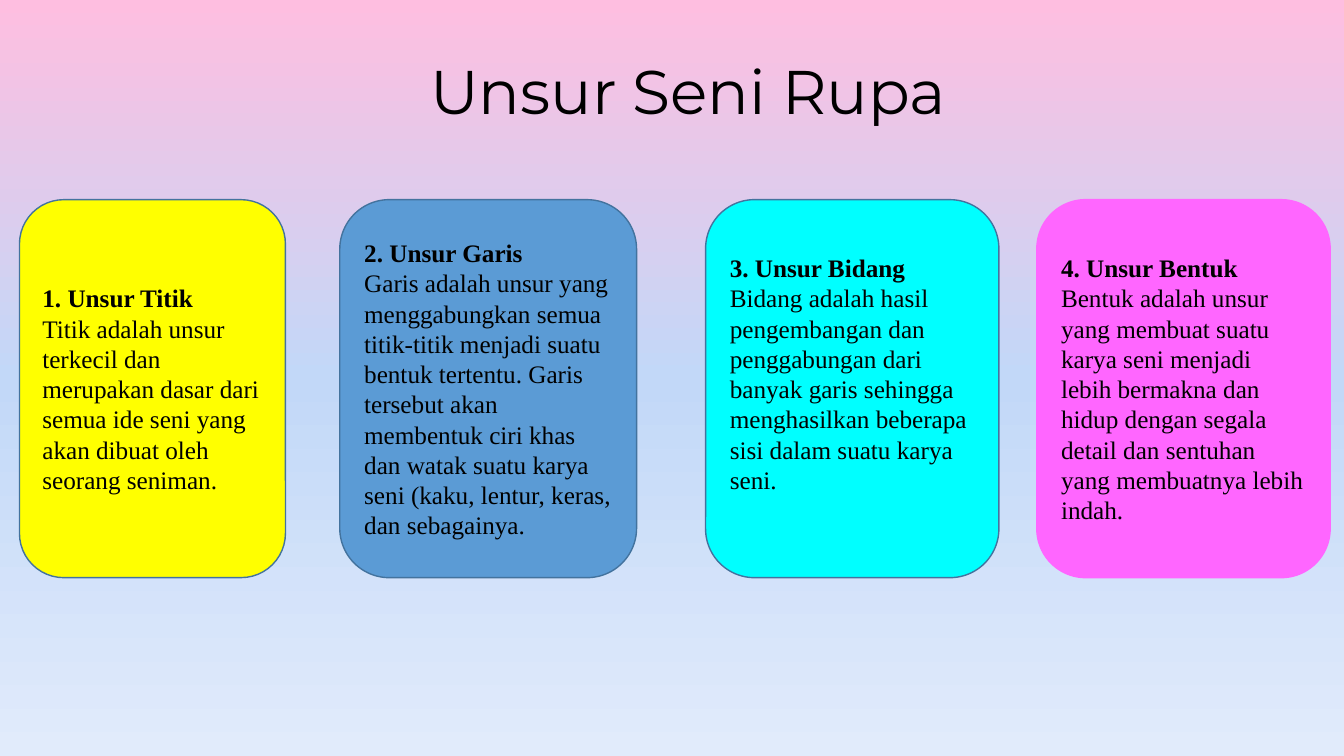
from copy import deepcopy
from dataclasses import dataclass

from pptx import Presentation
from pptx.dml.color import RGBColor
from pptx.enum.shapes import MSO_SHAPE
from pptx.enum.text import MSO_ANCHOR, PP_ALIGN
from pptx.oxml.ns import qn
from pptx.util import Pt

ROUNDED = MSO_SHAPE.ROUNDED_RECTANGLE
MIDDLE = MSO_ANCHOR.MIDDLE
LEFT, CENTER = PP_ALIGN.LEFT, PP_ALIGN.CENTER

TITLE = "Unsur Seni Rupa"
CARDS = [
    {"heading": "1. Unsur Titik",
     "body": "Titik adalah unsur terkecil dan merupakan dasar dari semua ide seni "
             "yang akan dibuat oleh seorang seniman.",
     "left": 13.9, "width": 190, "fill": "FFFF00", "line": "43739E", "bottom_inset": 3.6},
    {"heading": "2. Unsur Garis",
     "body": "Garis adalah unsur yang menggabungkan semua titik-titik menjadi suatu "
             "bentuk tertentu. Garis tersebut akan membentuk ciri khas dan watak suatu "
             "karya seni (kaku, lentur, keras, dan sebagainya.",
     "left": 242.7, "width": 212, "fill": "5B9BD5", "line": "43739E", "bottom_inset": 3.6},
    {"heading": "3. Unsur Bidang",
     "body": "Bidang adalah hasil pengembangan dan penggabungan dari banyak garis "
             "sehingga menghasilkan beberapa sisi dalam suatu karya seni.",
     "left": 504, "width": 209.5, "fill": "00FFFF", "line": "43739E", "bottom_inset": 25.2},
    {"heading": "4. Unsur Bentuk",
     "body": "Bentuk adalah unsur yang membuat suatu karya seni menjadi lebih bermakna "
             "dan hidup dengan segala detail dan sentuhan yang membuatnya lebih indah.",
     "left": 740.6, "width": 209.5, "fill": "FF66FF", "line": "FF66FF", "bottom_inset": 3.6},
]
CARD_TOP, CARD_HEIGHT = 142.6, 270


@dataclass(frozen=True)
class Theme:
    background: tuple = ("FEBEE0", "C2D8F8", "E1EBFB")
    text: str = "000000"
    title_font: str = "Montserrat"
    card_font: str = "Times New Roman"
    title_size: int = 44
    card_size: int = 18


THEME = Theme()


def format_paragraph(para, font, size, alignment, bold=False):
    para.alignment = alignment
    for span in para.runs:
        span.font.name = font
        span.font.size = Pt(size)
        span.font.bold = bold
        span.font.color.rgb = RGBColor.from_string(THEME.text)


def paint_background(page):
    fill = page.background.fill
    fill.gradient()
    fill.gradient_angle = 270
    first_stop = next(page.element.iter(qn("a:gs")))
    first_stop.addnext(deepcopy(first_stop))
    for index, (stop, color) in enumerate(zip(fill.gradient_stops, THEME.background)):
        stop.position = index / (len(THEME.background) - 1)
        stop.color.rgb = RGBColor.from_string(color)


def set_title(page):
    title = page.shapes.title
    title.left, title.top = Pt(270), Pt(15)
    title.width, title.height = Pt(443.5), Pt(104.4)
    frame = title.text_frame
    frame.text = TITLE
    frame.word_wrap = True
    frame.vertical_anchor = MIDDLE
    para = frame.paragraphs[0]
    para.line_spacing = 0.9
    format_paragraph(para, THEME.title_font, THEME.title_size, CENTER)


def add_card(page, card):
    box = page.shapes.add_shape(
        ROUNDED, Pt(card["left"]), Pt(CARD_TOP), Pt(card["width"]), Pt(CARD_HEIGHT))
    box.shadow.inherit = False
    box.fill.solid()
    box.fill.fore_color.rgb = RGBColor.from_string(card["fill"])
    box.line.color.rgb = RGBColor.from_string(card["line"])
    box.line.width = Pt(1)
    frame = box.text_frame
    frame.word_wrap = True
    frame.vertical_anchor = MIDDLE
    frame.margin_bottom = Pt(card["bottom_inset"])
    frame.text = card["heading"] + "\n" + card["body"]
    heading, body = frame.paragraphs
    format_paragraph(heading, THEME.card_font, THEME.card_size, LEFT, bold=True)
    format_paragraph(body, THEME.card_font, THEME.card_size, LEFT)


def main():
    deck = Presentation()
    deck.slide_width, deck.slide_height = Pt(960), Pt(540)
    page = deck.slides.add_slide(deck.slide_layouts.get_by_name("Title Only"))
    paint_background(page)
    set_title(page)
    for card in CARDS:
        add_card(page, card)
    deck.save("out.pptx")


if __name__ == "__main__":
    main()
